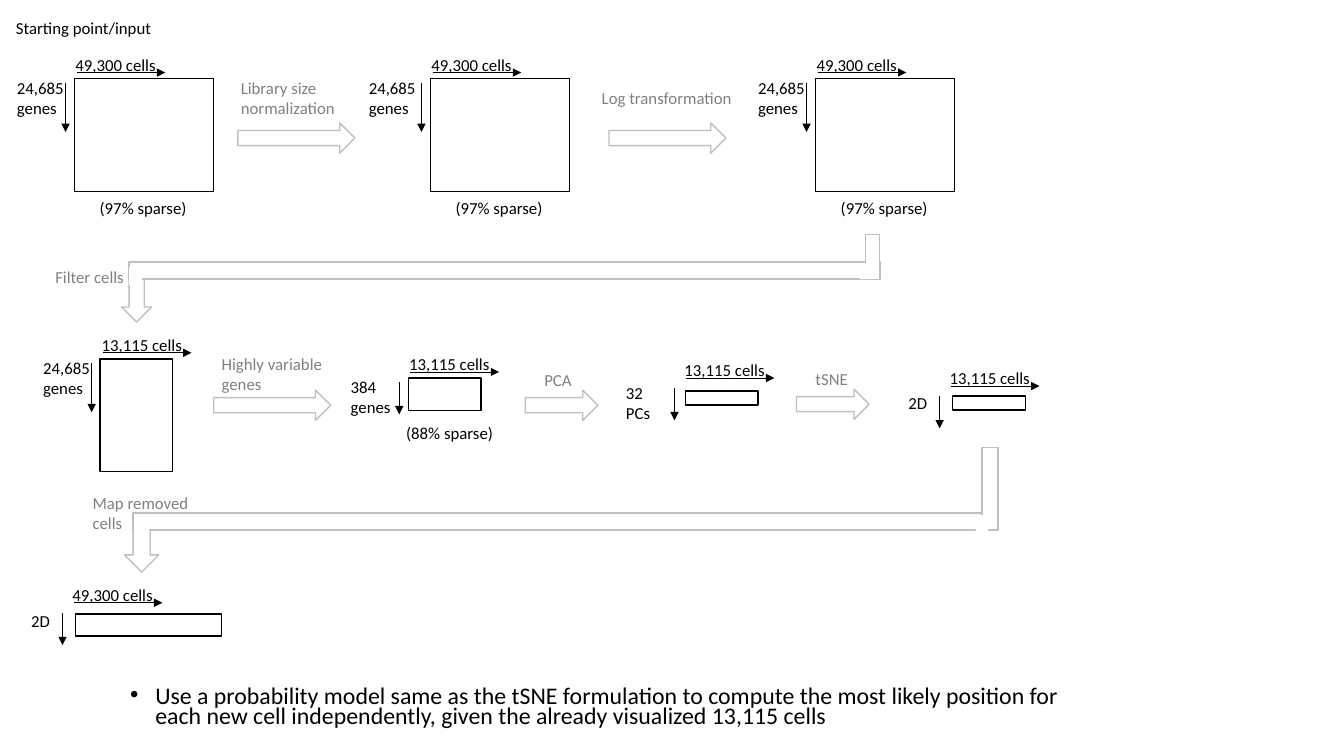
from lxml.etree import SubElement
from pptx import Presentation
from pptx.dml.color import RGBColor
from pptx.enum.shapes import MSO_CONNECTOR as Connector, MSO_SHAPE as Preset
from pptx.enum.text import MSO_ANCHOR as Anchor, MSO_AUTO_SIZE as AutoSize, PP_ALIGN as Align
from pptx.oxml.ns import qn
from pptx.util import Inches, Pt

BLACK, GREY, SILVER, WHITE = "000000", "808080", "BFBFBF", "FFFFFF"


def colour(value):
    return RGBColor.from_string(value)


class Diagram:
    font = "Calibri"
    size = 12

    def __init__(self, deck):
        self.page = deck.slides.add_slide(deck.slide_layouts[1])
        title = self.page.shapes.title
        title.element.getparent().remove(title.element)

    def style(self, para, size, ink):
        para.font.name = self.font
        para.font.size = Pt(size)
        para.font.color.rgb = colour(ink)

    def text(self, left, top, width, lines, ink=BLACK):
        lines = lines.split("\n")
        height = 0.1 + 0.2 * len(lines)
        box = self.page.shapes.add_textbox(
            Inches(left), Inches(top), Inches(width), Inches(height))
        frame = box.text_frame
        frame.word_wrap = False
        frame.auto_size = AutoSize.SHAPE_TO_FIT_TEXT
        for index, line in enumerate(lines):
            para = frame.add_paragraph() if index else frame.paragraphs[0]
            para.text = line
            self.style(para, self.size, ink)

    def shape(self, preset, at, fill=None, line=None, parent=None, turn=0):
        shape = (parent or self.page).shapes.add_shape(preset, *map(Inches, at))
        shape.shadow.inherit = False
        shape.rotation = turn
        if fill:
            shape.fill.solid()
            shape.fill.fore_color.rgb = colour(fill)
        else:
            shape.fill.background()
        if line:
            shape.line.color.rgb = colour(line)
            shape.line.width = Pt(1)
        else:
            shape.line.fill.background()
        return shape

    def block_arrow(self, at, parent=None, turn=0):
        return self.shape(Preset.RIGHT_ARROW, at, WHITE, SILVER, parent, turn)

    def pointer(self, left, top, across, down):
        line = self.page.shapes.add_connector(
            Connector.STRAIGHT, Inches(left), Inches(top),
            Inches(left + across), Inches(top + down))
        line.line.color.rgb = colour(BLACK)
        line.line.width = Pt(0.5)
        properties = line.line._get_or_add_ln()
        SubElement(properties, qn("a:tailEnd"), type="triangle")
        SubElement(line._element.spPr, qn("a:effectLst"))

    def matrix(self, left, top, cells, outline, rows, rows_at, drop):
        self.shape(Preset.RECTANGLE, outline, line=BLACK)
        self.text(left, top, 1.01, cells)
        self.text(*rows_at, rows)
        self.pointer(left + 0.11, top + 0.23, 0.88, 0)
        self.pointer(left, top + 0.33, 0, drop)

    def elbow(self, head, bar, riser, patches):
        group = self.page.shapes.add_group_shape()
        self.block_arrow(head, group, 90)
        for at, turn in ((bar, 0), (riser, 270)):
            arm = self.block_arrow(at, group, turn)
            arm.adjustments[0] = 1
            arm.adjustments[1] = 0
        for at in patches:
            self.shape(Preset.RECTANGLE, at, WHITE, parent=group)

    def bullet(self, at, words):
        box = self.page.placeholders[1]
        box.left, box.top, box.width, box.height = map(Inches, at)
        frame = box.text_frame
        frame.auto_size = AutoSize.NONE
        frame.word_wrap = True
        frame.vertical_anchor = Anchor.TOP
        para = frame.paragraphs[0]
        para.text = words
        para.alignment = Align.LEFT
        para.line_spacing = 0.7
        para.space_before = Pt(10)
        self.style(para, 17, BLACK)
        properties = para._p.get_or_add_pPr()
        properties.set("marL", str(Inches(0.25)))
        properties.set("indent", str(-Inches(0.25)))
        SubElement(properties, qn("a:buFont"), typeface="Arial")
        SubElement(properties, qn("a:buChar"), char="•")


def main():
    deck = Presentation()
    deck.slide_width, deck.slide_height = Inches(13.33), Inches(7.5)
    diagram = Diagram(deck)
    diagram.text(0.06, 0.13, 1.55, "Starting point/input")

    for left, rows_left in ((0.65, 0.07), (4.18, 3.56), (8, 7.42)):
        diagram.matrix(left, 0.49, "49,300 cells", (left + 0.09, 0.78, 1.38, 1.12),
                       "24,685\ngenes", (rows_left, 0.72, 0.67), 0.49)
        diagram.text(left + 0.24, 1.91, 1.08, "(97% sparse)")

    diagram.matrix(0.91, 3.27, "13,115 cells", (0.99, 3.56, 0.72, 1.12),
                   "24,685\ngenes", (0.33, 3.5, 0.67), 0.49)
    for left, top, outline, rows, rows_at in (
        (3.96, 3.46, (4.05, 3.75, 0.72, 0.32), "384\ngenes", (3.38, 3.69, 0.6)),
        (6.69, 3.52, (6.8, 3.88, 0.72, 0.14), "32\nPCs", (6.11, 3.75, 0.45)),
        (9.32, 3.6, (9.45, 3.93, 0.72, 0.14), "2D", (8.91, 3.85, 0.39)),
    ):
        diagram.matrix(left, top, "13,115 cells", outline, rows, rows_at, 0.32)
    diagram.text(3.93, 4.14, 1.08, "(88% sparse)")
    diagram.matrix(0.62, 5.75, "49,300 cells", (0.75, 6.09, 1.45, 0.22),
                   "2D", (0.21, 6.01, 0.39), 0.32)

    diagram.elbow((1.06, 2.75, 0.59, 0.3), (1.28, 2.6, 7.45, 0.17),
                  (8.43, 2.48, 0.45, 0.14),
                  ((8.53, 2.61, 0.1, 0.16), (1.28, 2.65, 0.13, 0.18)))
    diagram.elbow((1.11, 5.21, 0.59, 0.34), (1.32, 5.09, 8.58, 0.17),
                  (9.41, 4.77, 0.82, 0.16),
                  ((9.68, 5.11, 0.12, 0.16), (1.33, 5.14, 0.15, 0.18)))

    for left, top, width in ((2.36, 1.22, 1.16), (6.04, 1.22, 1.16), (2.12, 3.87, 1.16),
                             (5.21, 3.87, 0.72), (7.9, 3.86, 0.72)):
        diagram.block_arrow((left, top, width, 0.3))
    for left, top, width, step in (
        (2.29, 0.72, 1.14, "Library size\nnormalization"),
        (5.87, 0.82, 1.5, "Log transformation"),
        (0.45, 2.6, 0.89, "Filter cells"),
        (2.1, 3.46, 1.21, "Highly variable\ngenes"),
        (5.3, 3.62, 0.48, "PCA"),
        (7.99, 3.61, 0.53, "tSNE"),
        (0.82, 4.84, 1.16, "Map removed\ncells"),
    ):
        diagram.text(left, top, width, step, GREY)

    diagram.bullet((1.19, 6.78, 9.63, 0.52),
                   "Use a probability model same as the tSNE formulation to compute the most "
                   "likely position for each new cell independently, given the already "
                   "visualized 13,115 cells")
    deck.save("out.pptx")


if __name__ == "__main__":
    main()
